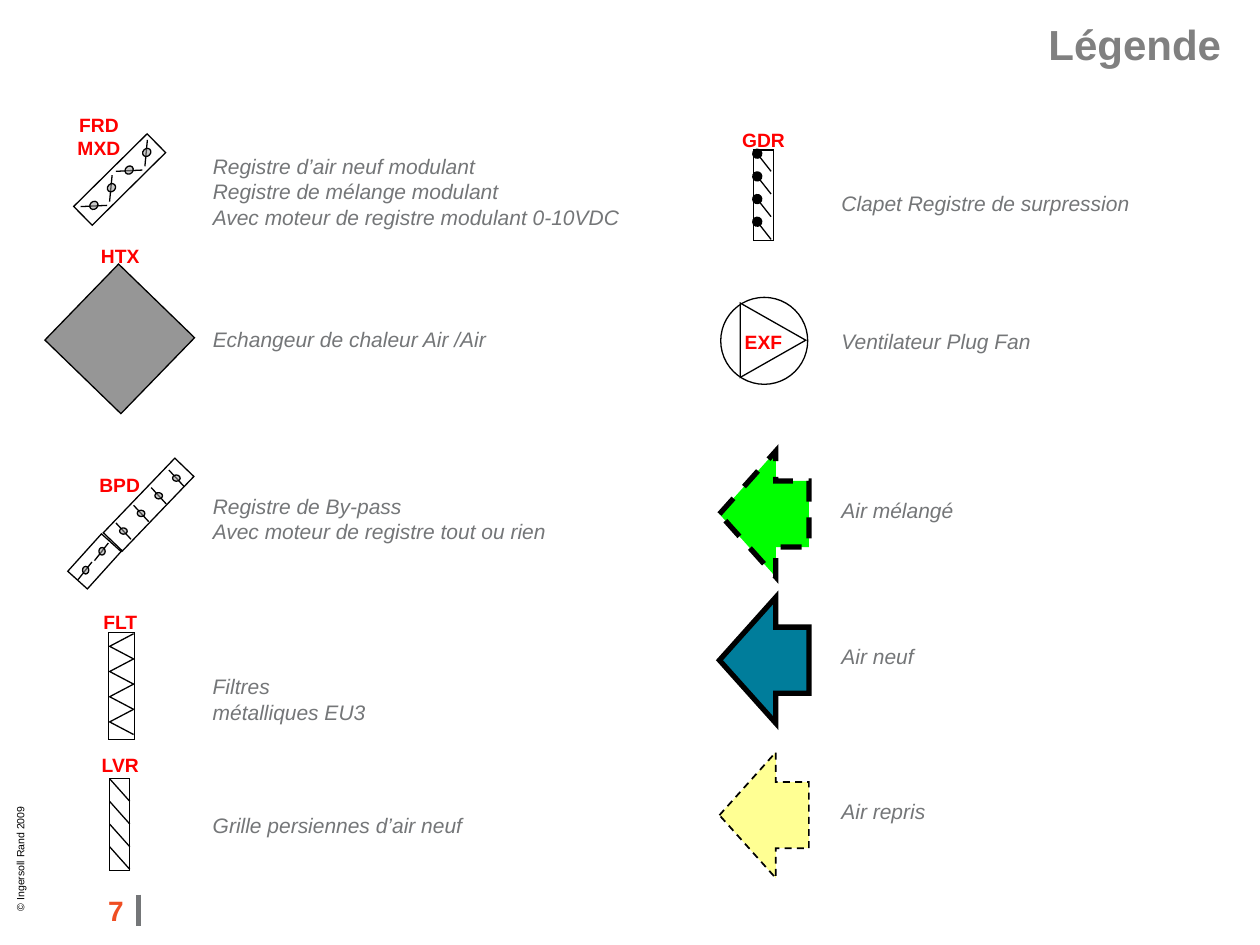
from pptx import Presentation
from pptx.util import Inches, Pt
from pptx.dml.color import RGBColor
from pptx.enum.dml import MSO_LINE
from pptx.enum.shapes import MSO_SHAPE as Kind, MSO_CONNECTOR as Conn
from pptx.enum.text import PP_ALIGN as Align, MSO_ANCHOR as Anchor
from pptx.oxml.ns import qn
from lxml.etree import SubElement

BLACK = RGBColor(0x00, 0x00, 0x00)
WHITE = RGBColor(0xFF, 0xFF, 0xFF)
RED = RGBColor(0xFF, 0x00, 0x00)
STEEL = RGBColor(0x96, 0x96, 0x96)
GREY = RGBColor(0x74, 0x76, 0x78)
TITLE = RGBColor(0x80, 0x80, 0x80)
ORANGE = RGBColor(0xEF, 0x4E, 0x23)
GREEN = RGBColor(0x00, 0xFF, 0x00)
TEAL = RGBColor(0x00, 0x7D, 0x9B)
YELLOW = RGBColor(0xFF, 0xFF, 0x66)

deck = Presentation()
deck.slide_width, deck.slide_height = Inches(10), Inches(7.5)
slide = deck.slides.add_slide(deck.slide_layouts[6])
shapes = slide.shapes


def draw(kind, at, fill, turn=0, alpha=100, width=0.75, dash=None):
    shape = shapes.add_shape(kind, *map(Inches, at))
    shape.shadow.inherit = False
    shape.rotation = turn
    shape.fill.solid()
    shape.fill.fore_color.rgb = fill
    if alpha < 100:
        tint = shape.fill._xPr.find(".//" + qn("a:srgbClr"))
        SubElement(tint, qn("a:alpha"), val=str(alpha * 1000))
    shape.line.color.rgb = BLACK
    shape.line.width = Pt(width)
    if dash:
        shape.line.dash_style = dash
    SubElement(shape.line._get_or_add_ln(), qn("a:miter"), lim="800000")
    return shape


def write(at, words, size, color, bold=False, italic=False, align=Align.LEFT, pad=(0.1, 0.05), wrap=True):
    box = shapes.add_textbox(*map(Inches, at))
    frame = box.text_frame
    frame.word_wrap = wrap
    frame.margin_left = frame.margin_right = Inches(pad[0])
    frame.margin_top = frame.margin_bottom = Inches(pad[1])
    frame.text = words
    for para in frame.paragraphs:
        para.alignment = align
        font = para.runs[0].font
        font.name, font.size, font.color.rgb = "Arial", Pt(size), color
        font.bold, font.italic = bold, italic
    return box


title = write((0.79, 0.16, 9, 0.44), "Légende", 24, TITLE, bold=True, align=Align.RIGHT)
title.text_frame.vertical_anchor = Anchor.MIDDLE
title.text_frame.paragraphs[0].line_spacing = 0.85
write((0.31, 7.04, 0.77, 0.37), "7", 16, ORANGE, bold=True, align=Align.RIGHT)
write((-0.63, 6.44, 1.58, 0.2), "© Ingersoll Rand 2009", 6, BLACK).rotation = 270

draw(Kind.OVAL, (5.72, 2.36, 0.69, 0.69), WHITE)
draw(Kind.ISOSCELES_TRIANGLE, (5.84, 2.44, 0.59, 0.52), WHITE, 90)
draw(Kind.RECTANGLE, (0.53, 2.27, 0.84, 0.84), STEEL, 44.1)
for at, turn in [
    ((0.54, 1.32, 0.82, 0.21), 315.3),
    ((0.77, 3.9, 0.82, 0.21), 313.8),
    ((0.55, 4.35, 0.4, 0.21), 312),
]:
    draw(Kind.RECTANGLE, at, WHITE, turn, 50)
for at in [(0.86, 5.02, 0.21, 0.85), (5.98, 1.19, 0.16, 0.72), (0.87, 6.18, 0.16, 0.73)]:
    draw(Kind.RECTANGLE, at, WHITE)

lines = [(1.1, 7.1, 1.1, 7.35, GREY, 3, False)]
dots = []
for i in range(2):
    x, y = 0.28 * i, -0.28 * i
    lines.append((0.64 + x, 1.64 + y, 0.85 + x, 1.63 + y, BLACK, 0.75, False))
    lines.append((0.87 + x, 1.6 + y, 0.89 + x, 1.39 + y, BLACK, 0.75, False))
    dots.append((0.71 + x, 1.6 + y, 0.07, 0.06, 315.3))
    dots.append((0.85 + x, 1.46 + y, 0.07, 0.06, 315.3))
    x, y = 0.13 * i, -0.15 * i
    lines.append((0.62 + x, 4.6 + y, 0.73 + x, 4.46 + y, BLACK, 0.75, False))
    dots.append((0.65 + x, 4.5 + y, 0.06, 0.05, 270.7))
for i in range(4):
    x, y = 0.14 * i, -0.14 * i
    lines.append((0.92 + x, 4.15 + y, 1.04 + x, 4.28 + y, BLACK, 0.75, False))
    dots.append((0.95 + x, 4.19 + y, 0.06, 0.05, 3.6))
    y = 1.22 + 0.18 * i
    lines.append((6.01, y, 6.12, y + 0.14, BLACK, 0.75, True))
    y = 6.18 + 0.18 * i
    lines.append((0.87, y, 1.03, y + 0.18, BLACK, 0.75, False))
    y = 5.03 + 0.2 * i
    path = shapes.build_freeform(Inches(1.06), Inches(y))
    path.add_line_segments(
        [(Inches(0.87), Inches(y + 0.1)), (Inches(1.06), Inches(y + 0.2))], close=False
    )
    fold = path.convert_to_shape()
    fold.shadow.inherit = False
    fold.fill.background()
    fold.line.color.rgb = BLACK
    fold.line.width = Pt(0.75)

for *ends, color, width, knob in lines:
    line = shapes.add_connector(Conn.STRAIGHT, *map(Inches, ends))
    line.line.color.rgb = color
    line.line.width = Pt(width)
    if knob:
        SubElement(line.line._get_or_add_ln(), qn("a:headEnd"), type="oval")
    SubElement(line._element.spPr, qn("a:effectLst"))
for *at, turn in dots:
    draw(Kind.OVAL, at, STEEL, turn, 50)

for y, fill, alpha, width, dash in [
    (3.58, GREEN, 100, 3, MSO_LINE.DASH),
    (4.74, TEAL, 100, 3, None),
    (5.97, YELLOW, 70, 1, MSO_LINE.DASH),
]:
    arrow = draw(Kind.LEFT_ARROW, (5.71, y, 0.71, 1), fill, 0, alpha, width, dash)
    arrow.adjustments[0], arrow.adjustments[1] = 0.525, 0.631

for x, y, wide, high, words in [
    (0.54, 0.86, 0.49, 0.44, "FRD\nMXD"),
    (0.72, 1.9, 0.47, 0.26, "HTX"),
    (0.71, 3.72, 0.48, 0.27, "BPD"),
    (0.74, 4.8, 0.43, 0.26, "FLT"),
    (0.73, 5.94, 0.45, 0.26, "LVR"),
    (5.81, 0.98, 0.5, 0.26, "GDR"),
    (5.83, 2.58, 0.46, 0.26, "EXF"),
]:
    write((x, y, wide, high), words, 11, RED, bold=True, align=Align.CENTER, pad=(0.07, 0.04), wrap=False)

for x, y, wide, high, words in [
    (1.59, 1.17, 3.45, 0.71, "Registre d’air neuf modulant\nRegistre de mélange modulant\nAvec moteur de registre modulant 0-10VDC"),
    (1.59, 2.54, 2.81, 0.3, "Echangeur de chaleur Air /Air"),
    (1.59, 3.87, 3.32, 0.5, "Registre de By-pass\nAvec moteur de registre tout ou rien"),
    (1.59, 5.3, 1.5, 0.5, "Filtres métalliques EU3"),
    (1.59, 6.4, 2.74, 0.3, "Grille persiennes d’air neuf"),
    (6.58, 1.46, 2.7, 0.3, "Clapet Registre de surpression"),
    (6.58, 2.56, 2.24, 0.3, "Ventilateur Plug Fan"),
    (6.58, 3.9, 1.63, 0.3, "Air mélangé"),
    (6.58, 5.06, 1.25, 0.3, "Air neuf"),
    (6.58, 6.29, 1.33, 0.3, "Air repris"),
]:
    write((x, y, wide, high), words, 12, GREY, italic=True)

deck.save("out.pptx")
